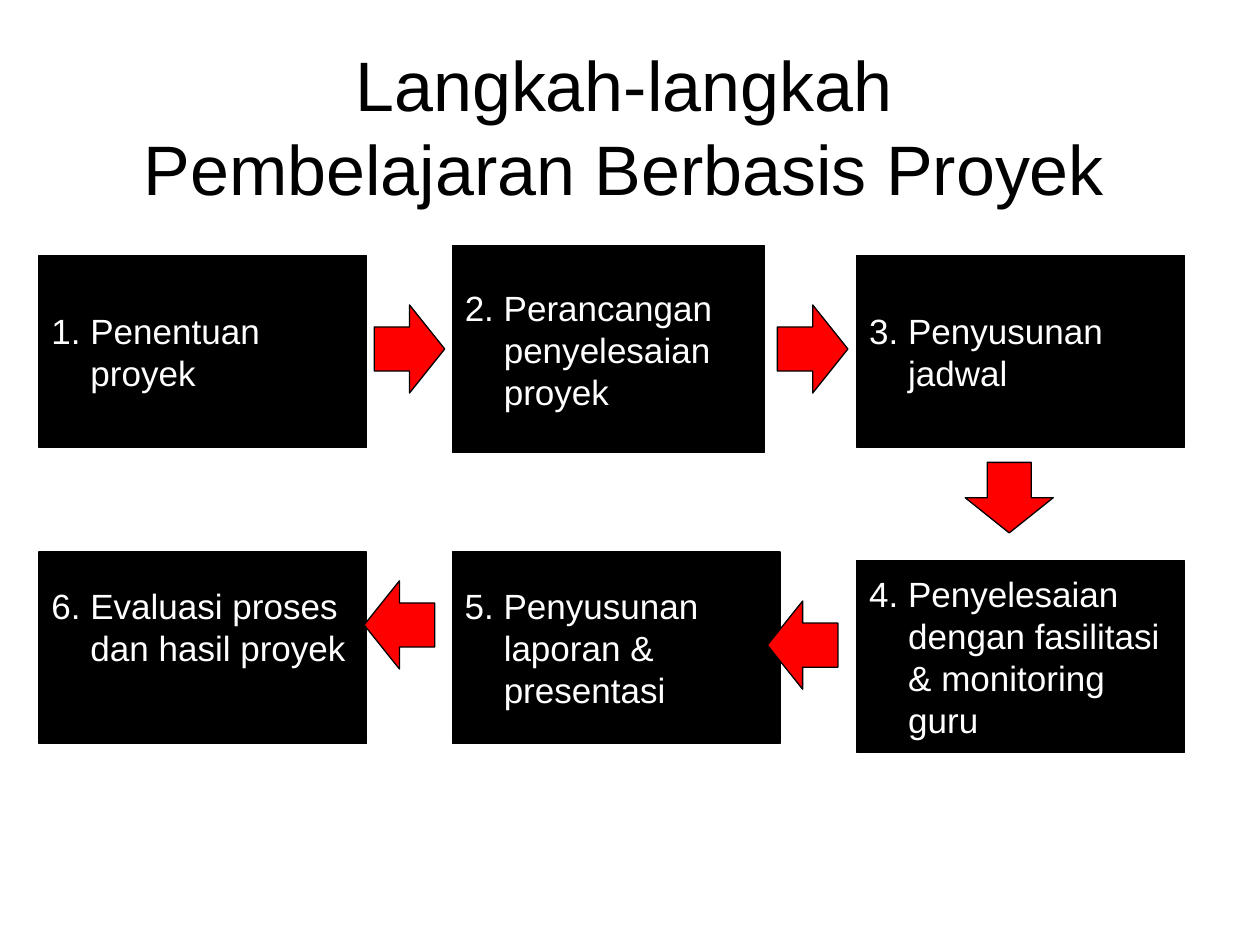
from pptx import Presentation
from pptx.dml.color import RGBColor
from pptx.enum.shapes import MSO_SHAPE as Shape
from pptx.enum.text import MSO_ANCHOR as Anchor, PP_ALIGN as Align
from pptx.util import Inches, Pt

COLORS = {"paper": "FFFFFF", "ink": "000000", "arrow": "FF0000"}
FONT = "Arial"
TITLE = "Langkah-langkah\vPembelajaran Berbasis Proyek"
COLUMNS = (0.31, 3.59, 6.8)
ROWS = (2.03, 4.38)
BOX = (2.6, 1.52)
ARROW = (0.56, 0.7)
HANGING = 0.31

STEPS = [
    {"text": "1. Penentuan proyek", "cell": (0, 0)},
    {"text": "2. Perancangan penyelesaian proyek", "cell": (1, 0),
     "shift": -0.08, "size": (2.48, 1.64)},
    {"text": "3. Penyusunan jadwal", "cell": (2, 0)},
    {"text": "4. Penyelesaian dengan fasilitasi & monitoring guru",
     "cell": (2, 1), "shift": 0.07},
    {"text": "5. Penyusunan laporan & presentasi", "cell": (1, 1)},
    {"text": "6. Evaluasi proses dan hasil proyek", "cell": (0, 1),
     "bottom": 0.38},
]
ARROWS = [
    (3.25, 2.77, 0),
    (6.45, 2.77, 0),
    (8.01, 3.95, 90),
    (6.37, 5.12, 180),
    (3.17, 4.96, 180),
]


def color(name):
    return RGBColor.from_string(COLORS[name])


def add_block(slide, kind, left, top, width, height, fill, line=None):
    shape = slide.shapes.add_shape(
        kind, Inches(left), Inches(top), Inches(width), Inches(height))
    shape.shadow.inherit = False
    shape.fill.solid()
    shape.fill.fore_color.rgb = color(fill)
    if line:
        shape.line.color.rgb = color(line)
        shape.line.width = Pt(0.75)
    else:
        shape.line.fill.background()
    return shape


def write_text(shape, text, size, ink, align=Align.LEFT, hanging=0, bottom=0.05):
    frame = shape.text_frame
    frame.word_wrap = True
    frame.vertical_anchor = Anchor.MIDDLE
    frame.margin_bottom = Inches(bottom)
    paragraph = frame.paragraphs[0]
    paragraph.text = text
    paragraph.alignment = align
    if hanging:
        properties = paragraph._p.get_or_add_pPr()
        properties.set("marL", str(Inches(hanging)))
        properties.set("indent", str(-Inches(hanging)))
    for run in paragraph.runs:
        run.font.name = FONT
        run.font.size = Pt(size)
        run.font.color.rgb = color(ink)


def main():
    presentation = Presentation()
    presentation.slide_width = Inches(10)
    presentation.slide_height = Inches(7.5)
    slide = presentation.slides.add_slide(presentation.slide_layouts[6])

    title = add_block(slide, Shape.RECTANGLE, 0, 0.27, 9.9, 1.45, "paper")
    write_text(title, TITLE, 40, "ink", align=Align.CENTER)

    for step in STEPS:
        column, row = step["cell"]
        top = ROWS[row] + step.get("shift", 0)
        box = add_block(slide, Shape.RECTANGLE, COLUMNS[column], top,
                        *step.get("size", BOX), "ink", "ink")
        write_text(box, step["text"], 20, "paper", hanging=HANGING,
                   bottom=step.get("bottom", 0.05))

    width, height = ARROW
    for center_x, center_y, rotation in ARROWS:
        arrow = add_block(slide, Shape.RIGHT_ARROW, center_x - width / 2,
                          center_y - height / 2, width, height, "arrow", "ink")
        arrow.rotation = rotation

    presentation.save("out.pptx")


if __name__ == "__main__":
    main()
